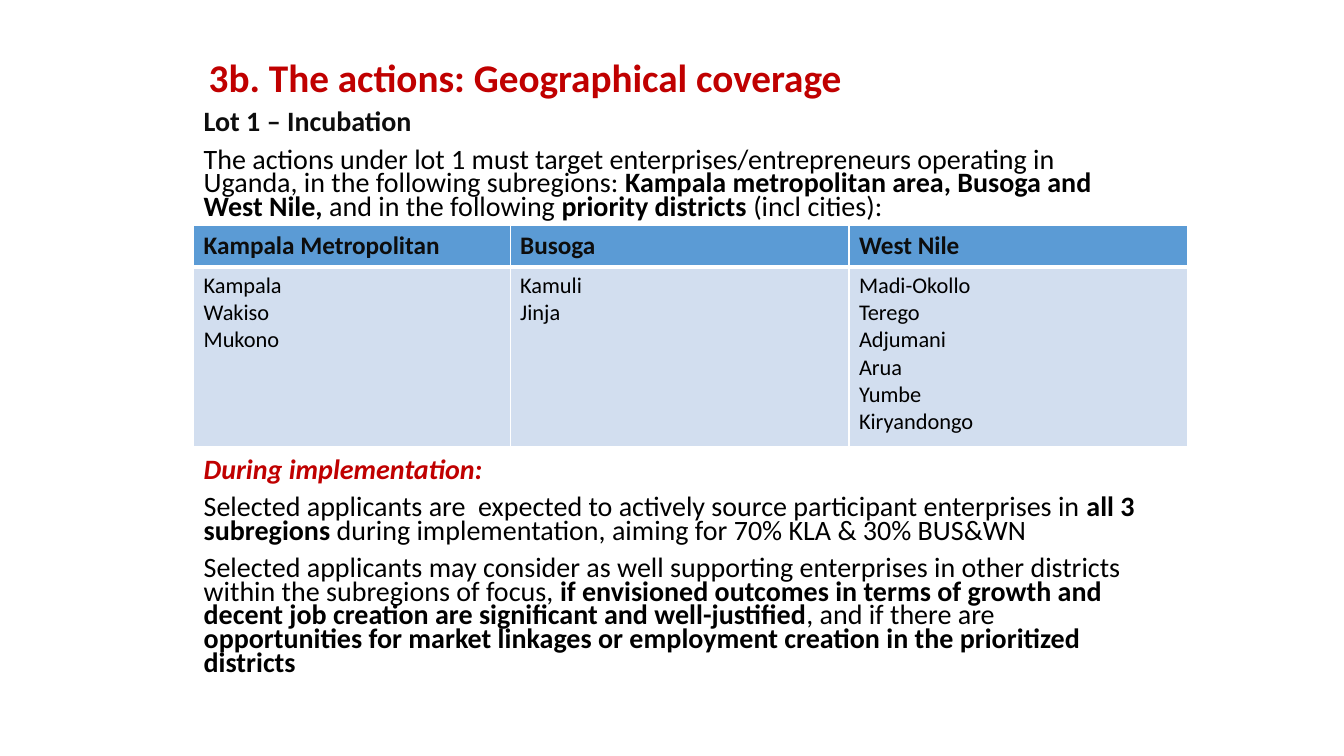
from lxml.etree import SubElement
from pptx import Presentation
from pptx.dml.color import RGBColor
from pptx.enum.text import MSO_ANCHOR, MSO_AUTO_SIZE, PP_ALIGN
from pptx.oxml.ns import qn
from pptx.util import Inches, Pt

FONT = "Calibri"
RED, DARK, BLACK, WHITE = "C00000", "0D0D0D", "000000", "FFFFFF"
HEADER_BLUE, BODY_BLUE = "5B9BD5", "D2DEEF"

TITLE = "3b. The actions: Geographical coverage"
PARAGRAPH_GAP, TABLE_GAP = 10, 171  # points before a paragraph

# Each paragraph: space before, colour, italic, runs of (text, bold)
BODY = [
    (0, DARK, False, [("Lot 1 – Incubation", True)]),
    (PARAGRAPH_GAP, BLACK, False, [
        ("The actions under lot 1 must target enterprises/entrepreneurs operating in "
         "Uganda, in the following subregions: ", False),
        ("Kampala metropolitan area, Busoga and West Nile, ", True),
        ("and in the following ", False),
        ("priority districts ", True),
        ("(incl cities):", False)]),
    (TABLE_GAP, RED, True, [("During implementation:", True)]),
    (PARAGRAPH_GAP, BLACK, False, [
        ("Selected applicants are  expected to actively source participant enterprises in ", False),
        ("all 3 subregions ", True),
        ("during implementation, aiming for 70% KLA & 30% BUS&WN", False)]),
    (PARAGRAPH_GAP, BLACK, False, [
        ("Selected applicants may consider as well supporting enterprises in other districts "
         "within the subregions of focus, ", False),
        ("if envisioned outcomes in terms of growth and decent job creation are significant "
         "and well-justified", True),
        (", and if there are ", False),
        ("opportunities for market linkages or employment creation in the prioritized "
         "districts", True)]),
]

DISTRICTS = {
    "Kampala Metropolitan": ["Kampala", "Wakiso", "Mukono"],
    "Busoga": ["Kamuli", "Jinja"],
    "West Nile": ["Madi-Okollo", "Terego", "Adjumani", "Arua", "Yumbe", "Kiryandongo"],
}
COLUMN_WIDTHS = [3.14, 3.36, 3.36]
ROW_HEIGHTS = [0.4, 1.78]


def color(hex_value):
    return RGBColor.from_string(hex_value)


def format_run(run, size, hex_value, bold, italic=False):
    font = run.font
    font.name, font.size, font.bold, font.italic = FONT, Pt(size), bold, italic
    font.color.rgb = color(hex_value)


def place(shape, left, top, width, height):
    shape.left, shape.top = Inches(left), Inches(top)
    shape.width, shape.height = Inches(width), Inches(height)
    shape.text_frame.auto_size = MSO_AUTO_SIZE.NONE
    shape.text_frame.word_wrap = True


def remove_bullet(paragraph):
    properties = paragraph._p.get_or_add_pPr()
    properties.set("marL", "0")
    properties.set("indent", "0")
    SubElement(properties, qn("a:buNone"))


def add_borders(cell, widths):
    """Draw white borders; widths are points by side: L, R, T, B."""
    properties = cell._tc.get_or_add_tcPr()
    for side, width in widths.items():
        line = SubElement(properties, qn(f"a:ln{side}"), w=str(Pt(width)))
        fill = SubElement(line, qn("a:solidFill"))
        SubElement(fill, qn("a:srgbClr"), val=WHITE)


def fill_cell(cell, lines, size, text_color, bold, background, borders):
    add_borders(cell, borders)
    cell.fill.solid()
    cell.fill.fore_color.rgb = color(background)
    cell.text_frame.text = "\n".join(lines)
    for paragraph in cell.text_frame.paragraphs:
        format_run(paragraph.runs[0], size, text_color, bold)


def add_title(slide):
    title = slide.shapes.title
    place(title, 1.97, 0.38, 9.45, 0.82)
    title.text_frame.vertical_anchor = MSO_ANCHOR.MIDDLE
    title.text_frame.text = TITLE
    paragraph = title.text_frame.paragraphs[0]
    paragraph.alignment = PP_ALIGN.LEFT
    paragraph.line_spacing = 0.9
    format_run(paragraph.runs[0], 28, RED, True)


def add_body(slide):
    body = slide.placeholders[1]
    place(body, 1.92, 1.07, 9.49, 6.05)
    frame = body.text_frame
    for index, (gap, text_color, italic, runs) in enumerate(BODY):
        paragraph = frame.add_paragraph() if index else frame.paragraphs[0]
        remove_bullet(paragraph)
        paragraph.line_spacing = 0.7
        paragraph.space_before = Pt(gap)
        for text, bold in runs:
            run = paragraph.add_run()
            run.text = text
            format_run(run, 20, text_color, bold, italic)


def add_districts(slide):
    table = slide.shapes.add_table(
        len(ROW_HEIGHTS), len(DISTRICTS), Inches(1.92), Inches(2.24),
        Inches(sum(COLUMN_WIDTHS)), Inches(sum(ROW_HEIGHTS))).table
    for row, height in zip(table.rows, ROW_HEIGHTS):
        row.height = Inches(height)
    for index, (region, districts) in enumerate(DISTRICTS.items()):
        table.columns[index].width = Inches(COLUMN_WIDTHS[index])
        fill_cell(table.cell(0, index), [region], 18, DARK, True, HEADER_BLUE,
                  {"L": 1, "R": 1, "T": 1, "B": 3})
        fill_cell(table.cell(1, index), districts, 16, BLACK, False, BODY_BLUE,
                  {"L": 1, "R": 1, "T": 3, "B": 1})


def main():
    presentation = Presentation()
    presentation.slide_width, presentation.slide_height = Inches(13.33), Inches(7.5)
    slide = presentation.slides.add_slide(presentation.slide_layouts[1])
    add_title(slide)
    add_body(slide)
    add_districts(slide)
    presentation.save("out.pptx")


if __name__ == "__main__":
    main()
